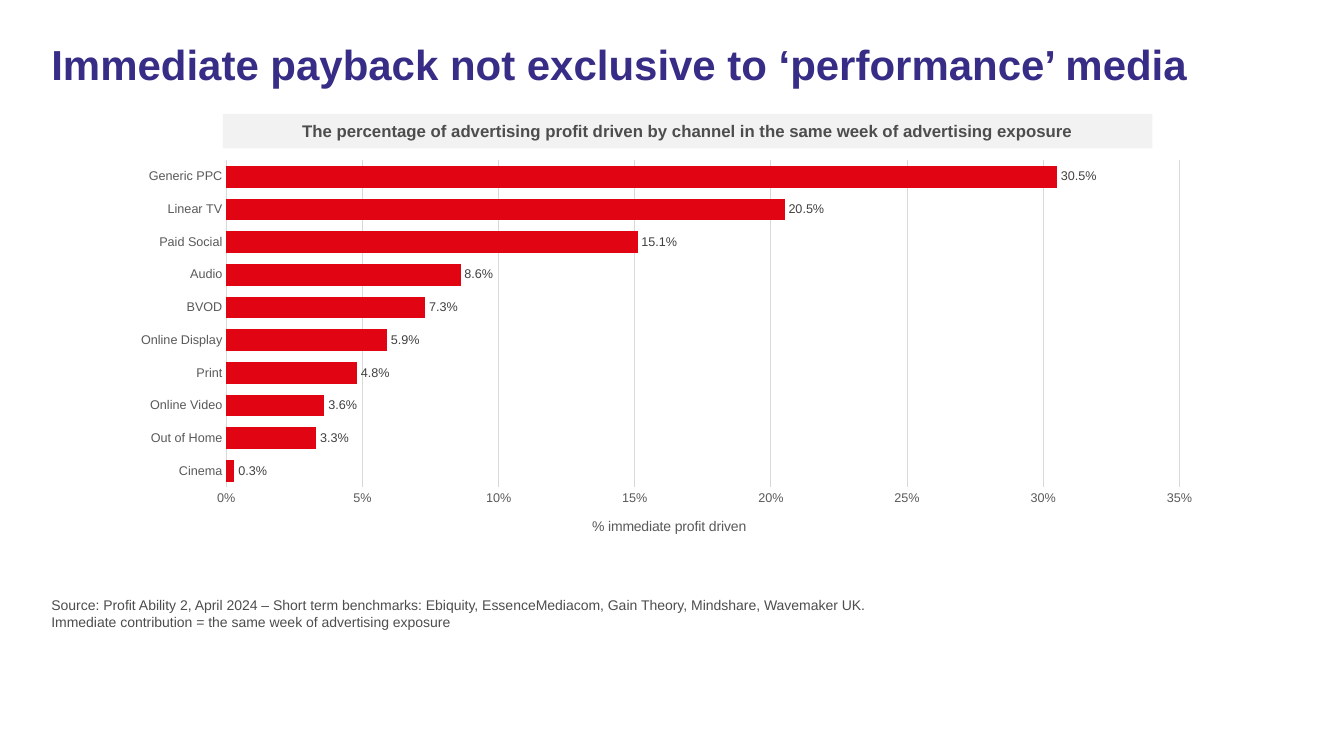
from lxml.etree import SubElement
from pptx import Presentation
from pptx.chart.data import CategoryChartData
from pptx.dml.color import RGBColor
from pptx.enum.chart import XL_CHART_TYPE, XL_LABEL_POSITION, XL_TICK_MARK
from pptx.enum.shapes import MSO_SHAPE
from pptx.enum.text import MSO_ANCHOR, MSO_AUTO_SIZE, PP_ALIGN
from pptx.oxml.ns import qn
from pptx.util import Cm, Pt

PURPLE = RGBColor(0x37, 0x2D, 0x87)
RED = RGBColor(0xE1, 0x05, 0x14)
DARK_GREY = RGBColor(0x4D, 0x4D, 0x4D)
AXIS_GREY = RGBColor(0x59, 0x59, 0x59)
LABEL_GREY = RGBColor(0x40, 0x40, 0x40)
GRID_GREY = RGBColor(0xD9, 0xD9, 0xD9)
BAND_GREY = RGBColor(0xF2, 0xF2, 0xF2)
BLACK = RGBColor(0, 0, 0)
FONT = "Arial"

PROFIT_SHARES = {
    "Cinema": 0.003,
    "Out of Home": 0.033,
    "Online Video": 0.036,
    "Print": 0.048,
    "Online Display": 0.059,
    "BVOD": 0.073,
    "Audio": 0.086,
    "Paid Social": 0.151,
    "Linear TV": 0.205,
    "Generic PPC": 0.305,
}
SOURCE_LINES = [
    "Source: Profit Ability 2, April 2024 – Short term benchmarks: "
    "Ebiquity, EssenceMediacom, Gain Theory, Mindshare, Wavemaker UK.",
    "Immediate contribution = the same week of advertising exposure",
]


def format_font(font, size, color, bold=False):
    font.name = FONT
    font.size = Pt(size)
    font.bold = bold
    font.color.rgb = color


def write_text(paragraph, text, size, color, bold=False,
               align=PP_ALIGN.LEFT, line_spacing=1.0):
    properties = paragraph._p.get_or_add_pPr()
    properties.set("marL", "0")
    properties.set("indent", "0")
    SubElement(properties, qn("a:buNone"))
    paragraph.alignment = align
    paragraph.line_spacing = line_spacing
    paragraph.space_before = Pt(0)
    run = paragraph.add_run()
    run.text = text
    format_font(run.font, size, color, bold)


def place(shape, box, anchor=MSO_ANCHOR.TOP):
    shape.left, shape.top, shape.width, shape.height = map(Cm, box)
    frame = shape.text_frame
    frame.word_wrap = True
    frame.auto_size = MSO_AUTO_SIZE.NONE
    frame.vertical_anchor = anchor
    return frame


def add_title(slide, box):
    frame = place(slide.shapes.title, box)
    write_text(frame.paragraphs[0],
               "Immediate payback not exclusive to ‘performance’ media",
               size=30, color=PURPLE, bold=True, line_spacing=0.9)


def add_chart_heading(slide, box):
    band = slide.shapes.add_shape(MSO_SHAPE.RECTANGLE, *map(Cm, box))
    band.shadow.inherit = False
    band.fill.solid()
    band.fill.fore_color.rgb = BAND_GREY
    band.line.fill.background()
    frame = place(band, box, MSO_ANCHOR.MIDDLE)
    write_text(frame.paragraphs[0],
               "The percentage of advertising profit driven by channel "
               "in the same week of advertising exposure",
               size=12, color=DARK_GREY, bold=True, align=PP_ALIGN.CENTER)


def set_layout(element, **fractions):
    layout = element.find(qn("c:layout"))
    if layout is None:
        layout = SubElement(element, qn("c:layout"))
        element.insert(0, layout)
    manual = SubElement(layout, qn("c:manualLayout"))
    if "w" in fractions:
        SubElement(manual, qn("c:layoutTarget"), val="inner")
    for name in ("x", "y"):
        SubElement(manual, qn(f"c:{name}Mode"), val="edge")
    for name, fraction in fractions.items():
        SubElement(manual, qn(f"c:{name}"), val=str(fraction))


def format_axis(axis):
    axis.major_tick_mark = XL_TICK_MARK.NONE
    axis.minor_tick_mark = XL_TICK_MARK.NONE
    format_font(axis.tick_labels.font, 9, AXIS_GREY)


def format_grey_line(line):
    line.color.rgb = GRID_GREY
    line.width = Pt(0.75)


def add_profit_chart(slide, box):
    data = CategoryChartData(number_format="0.0%")
    data.categories = PROFIT_SHARES.keys()
    data.add_series("Series 1", PROFIT_SHARES.values())
    chart = slide.shapes.add_chart(
        XL_CHART_TYPE.BAR_CLUSTERED, *map(Cm, box), data).chart
    chart.has_legend = False
    chart.has_title = False
    format_font(chart.font, 10, BLACK)

    plot = chart.plots[0]
    plot.vary_by_categories = False
    plot.gap_width = 50
    plot.overlap = 100
    series = plot.series[0]
    series.format.fill.solid()
    series.format.fill.fore_color.rgb = RED
    labels = series.data_labels
    labels.show_value = True
    labels.position = XL_LABEL_POSITION.OUTSIDE_END
    labels.number_format = "0.0%"
    labels.number_format_is_linked = False
    format_font(labels.font, 9, LABEL_GREY)

    category_axis, value_axis = chart.category_axis, chart.value_axis
    format_axis(category_axis)
    category_axis.has_major_gridlines = False
    format_grey_line(category_axis.format.line)

    format_axis(value_axis)
    value_axis.minimum_scale = 0
    value_axis.maximum_scale = 0.35
    value_axis.major_unit = 0.05
    value_axis.tick_labels.number_format = "0%"
    value_axis.tick_labels.number_format_is_linked = False
    value_axis.format.line.fill.background()
    value_axis.has_major_gridlines = True
    format_grey_line(value_axis.major_gridlines.format.line)

    axis_title = value_axis.axis_title
    paragraph = axis_title.text_frame.paragraphs[0]
    paragraph.text = "% immediate profit driven"
    format_font(paragraph.runs[0].font, 10, AXIS_GREY)
    set_layout(axis_title.element, x=0.43, y=0.9)
    plot_area = chart.element.find(f".//{qn('c:plotArea')}")
    set_layout(plot_area, x=0.098, y=0.02, w=0.871, h=0.813)


def add_source(slide, box):
    frame = place(slide.placeholders[1], box)
    for index, line in enumerate(SOURCE_LINES):
        paragraph = frame.add_paragraph() if index else frame.paragraphs[0]
        write_text(paragraph, line, size=10, color=DARK_GREY)


def main():
    presentation = Presentation()
    presentation.slide_width = Cm(33.87)
    presentation.slide_height = Cm(19.05)
    slide = presentation.slides.add_slide(presentation.slide_layouts[1])
    add_chart_heading(slide, (5.62, 2.87, 23.42, 0.87))
    add_title(slide, (1.04, 0.99, 32.33, 2.84))
    add_source(slide, (1.04, 14.91, 31.5, 0.84))
    add_profit_chart(slide, (3, 3.84, 27.58, 10.13))
    presentation.save("out.pptx")


if __name__ == "__main__":
    main()
